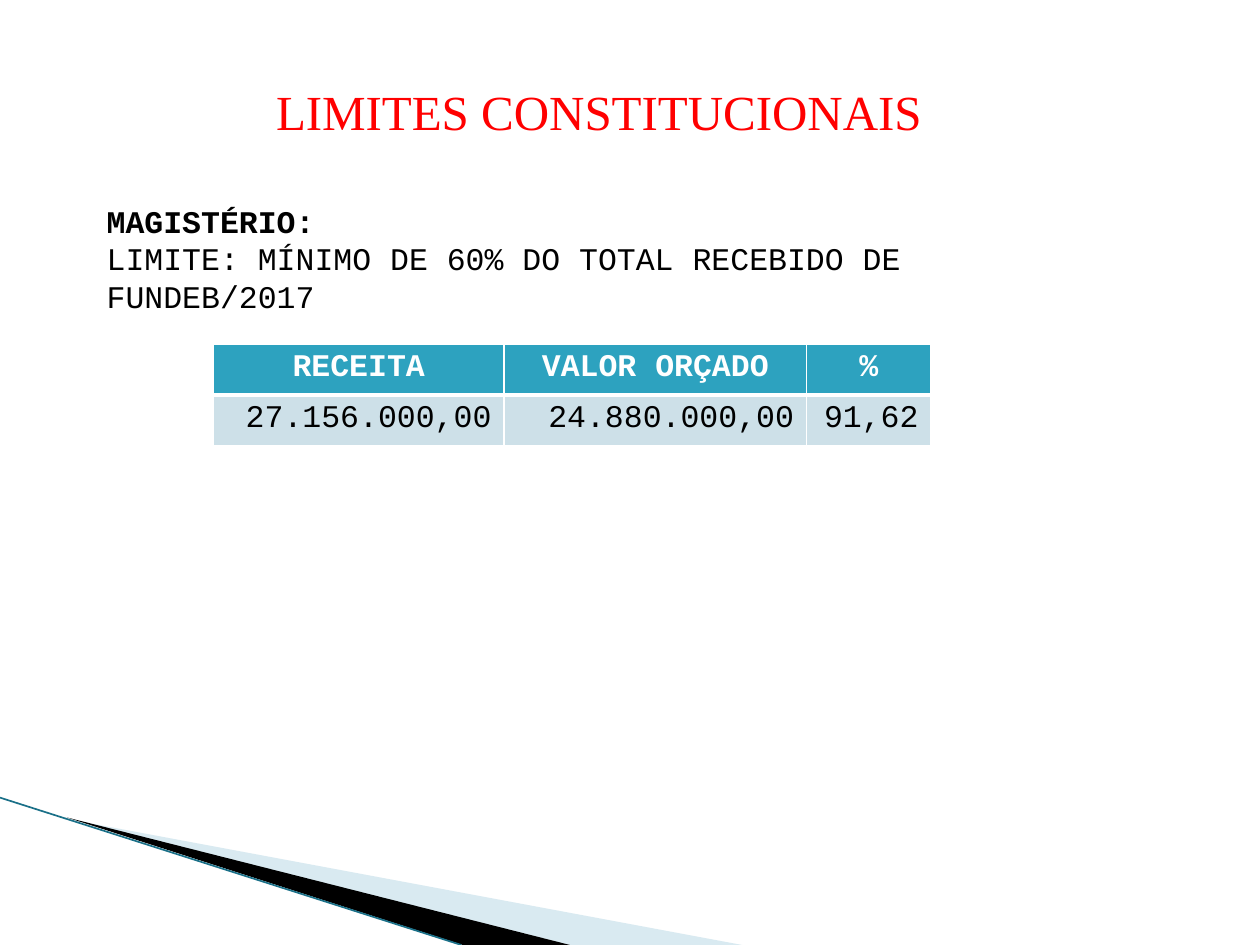
from lxml.etree import SubElement
from pptx import Presentation
from pptx.dml.color import RGBColor
from pptx.enum.text import MSO_ANCHOR, MSO_AUTO_SIZE, PP_ALIGN
from pptx.enum.shapes import MSO_CONNECTOR
from pptx.oxml import parse_xml
from pptx.oxml.ns import nsdecls, qn
from pptx.util import Cm, Pt

TITLE = "LIMITES CONSTITUCIONAIS"
BODY = [
    ("MAGISTÉRIO:", True),
    ("LIMITE: MÍNIMO DE 60% DO TOTAL RECEBIDO DE FUNDEB/2017", False),
]
TABLE_ROWS = [
    ("RECEITA", "VALOR ORÇADO", "%"),
    ("27.156.000,00", "24.880.000,00", "91,62"),
]
COLUMN_WIDTHS = (5.86, 6.1, 2.51)
ROW_HEIGHT = 1.03

BLACK = RGBColor(0x00, 0x00, 0x00)
WHITE = RGBColor(0xFF, 0xFF, 0xFF)
RED = RGBColor(0xFF, 0x00, 0x00)
TEAL = RGBColor(0x2D, 0xA2, 0xBF)
DARK_TEAL = RGBColor(0x1A, 0x70, 0x88)
PALE_TEAL = RGBColor(0xCD, 0xE0, 0xE8)
LIGHT_BLUE = RGBColor(0xA0, 0xCB, 0xDC)

WEDGES = [
    ([(1.4, 16.52), (14.96, 19.05), (11.49, 19.05)], LIGHT_BLUE, 40),
    ([(1.35, 16.48), (11.49, 19.05), (9.33, 19.05)], BLACK, 100),
]
EDGE_LINE = (0, 16.08, 9.3, 19.05)


def set_font(paragraph, name, size, color, bold=False):
    font = paragraph.font
    font.name, font.size, font.bold = name, Pt(size), bold
    font.color.rgb = color


def add_wedge(slide, points, color, opacity):
    corners = [(Cm(x), Cm(y)) for x, y in points]
    builder = slide.shapes.build_freeform(*corners[0])
    builder.add_line_segments(corners[1:], close=True)
    shape = builder.convert_to_shape()
    shape.shadow.inherit = False
    shape.line.fill.background()
    shape.fill.solid()
    shape.fill.fore_color.rgb = color
    if opacity < 100:
        color_element = shape.fill._xPr.find(qn("a:solidFill"))[0]
        SubElement(color_element, qn("a:alpha"), val=str(opacity * 1000))


def set_borders(cell, widths):
    properties = cell._tc.get_or_add_tcPr()
    for index, (side, width) in enumerate(widths.items()):
        border = parse_xml(
            f'<a:{side} {nsdecls("a")} w="{Pt(width)}"><a:solidFill>'
            f'<a:srgbClr val="{WHITE}"/></a:solidFill></a:{side}>'
        )
        properties.insert(index, border)


def add_decoration(slide):
    for points, color, opacity in WEDGES:
        add_wedge(slide, points, color, opacity)
    line = slide.shapes.add_connector(
        MSO_CONNECTOR.STRAIGHT, *(Cm(value) for value in EDGE_LINE)
    )
    line.line.color.rgb = DARK_TEAL
    line.line.width = Pt(0.95)
    SubElement(line._element.spPr, qn("a:effectLst"))


def add_title(slide):
    title = slide.shapes.title
    title.left, title.top, title.width, title.height = Cm(5.31), Cm(1.52), Cm(14.2), Cm(1.45)
    frame = title.text_frame
    frame.text = TITLE
    frame.word_wrap = False
    frame.auto_size = MSO_AUTO_SIZE.NONE
    frame.vertical_anchor = MSO_ANCHOR.TOP
    paragraph = frame.paragraphs[0]
    paragraph.alignment = PP_ALIGN.LEFT
    set_font(paragraph, "Times New Roman", 28, RED)


def add_body(slide):
    frame = slide.shapes.add_textbox(Cm(1.9), Cm(3.94), Cm(20.47), Cm(2.54)).text_frame
    frame.word_wrap = True
    for index, (text, bold) in enumerate(BODY):
        paragraph = frame.add_paragraph() if index else frame.paragraphs[0]
        paragraph.text = text
        set_font(paragraph, "Courier New", 18, BLACK, bold)


def add_limits_table(slide):
    row_count = len(TABLE_ROWS)
    table = slide.shapes.add_table(
        row_count, len(COLUMN_WIDTHS), Cm(4.3), Cm(6.93),
        Cm(sum(COLUMN_WIDTHS)), Cm(ROW_HEIGHT * row_count),
    ).table
    for column, width in zip(table.columns, COLUMN_WIDTHS):
        column.width = Cm(width)
    for row_index, values in enumerate(TABLE_ROWS):
        header = row_index == 0
        table.rows[row_index].height = Cm(ROW_HEIGHT)
        for column_index, value in enumerate(values):
            cell = table.cell(row_index, column_index)
            cell.text = value
            cell.fill.solid()
            cell.fill.fore_color.rgb = TEAL if header else PALE_TEAL
            paragraph = cell.text_frame.paragraphs[0]
            paragraph.alignment = PP_ALIGN.CENTER if header else PP_ALIGN.RIGHT
            set_font(paragraph, "Courier New", 18, WHITE if header else BLACK, header)
            top, bottom = (1, 3) if header else (3, 1)
            set_borders(cell, {"lnL": 1, "lnR": 1, "lnT": top, "lnB": bottom})


def main():
    presentation = Presentation()
    presentation.slide_width, presentation.slide_height = Cm(25.4), Cm(19.05)
    slide = presentation.slides.add_slide(presentation.slide_layouts[5])
    add_decoration(slide)
    add_title(slide)
    add_body(slide)
    add_limits_table(slide)
    presentation.save("out.pptx")


if __name__ == "__main__":
    main()
